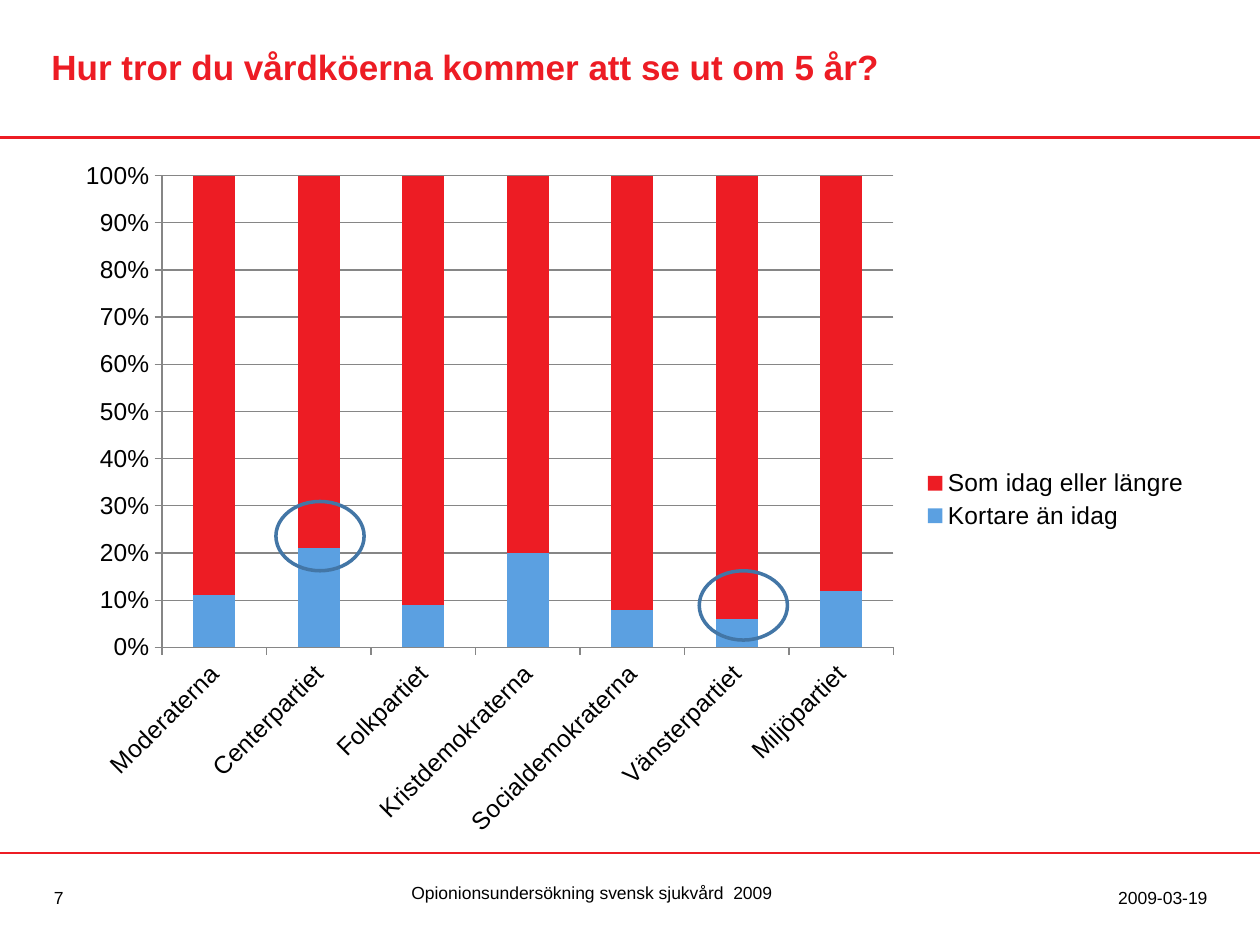
import pptx
import pptx.util
import pptx.chart.data
import pptx.dml.color
import pptx.enum.chart
import pptx.enum.shapes
import pptx.enum.text
import pptx.oxml
import pptx.oxml.ns

Inches, Pt = pptx.util.Inches, pptx.util.Pt
RGBColor = pptx.dml.color.RGBColor
ALIGN = pptx.enum.text.PP_ALIGN
XL = pptx.enum.chart

RED = RGBColor(0xED, 0x1C, 0x24)
BLUE = RGBColor(0x5B, 0xA0, 0xE1)
RING = RGBColor(0x43, 0x76, 0xA6)
GREY = RGBColor(0x86, 0x86, 0x86)
BLACK = RGBColor(0, 0, 0)
FACE = "Arial"
WIDE, HIGH = 10, 7.5

CATS = ["Moderaterna", "Centerpartiet", "Folkpartiet", "Kristdemokraterna",
        "Socialdemokraterna", "Vänsterpartiet", "Miljöpartiet"]
SHORT = [11, 21, 9, 20, 8, 6, 12]
SERIES = [("Kortare än idag", SHORT, BLUE),
          ("Som idag eller längre", [100 - val for val in SHORT], RED)]


def add_text(slide, box, text, size, color=BLACK, bold=False, align=ALIGN.LEFT):
    frame = slide.shapes.add_textbox(*map(Inches, box)).text_frame
    frame.word_wrap = True
    frame.vertical_anchor = pptx.enum.text.MSO_ANCHOR.MIDDLE
    frame.text = text
    para = frame.paragraphs[0]
    para.alignment = align
    font = para.runs[0].font
    font.name, font.size, font.bold = FACE, Pt(size), bold
    font.color.rgb = color


def add_rule(slide, top):
    line = slide.shapes.add_connector(
        pptx.enum.shapes.MSO_CONNECTOR.STRAIGHT,
        0, Inches(top), Inches(WIDE), Inches(top))
    line.line.color.rgb = RED
    line.line.width = Pt(1.5)
    line._element.spPr.append(pptx.oxml.parse_xml(
        "<a:effectLst %s/>" % pptx.oxml.ns.nsdecls("a")))


def add_header(slide, left, top, width):
    add_text(slide, (left, top, width, 0.45),
             "Hur tror du vårdköerna kommer att se ut om 5 år?", 20, RED, True)
    add_rule(slide, top + 0.79)


def add_footer(slide, left, top, width):
    add_rule(slide, top)
    add_text(slide, (left, top + 0.22, 0.38, 0.27), "7", 10)
    add_text(slide, (left + 2.01, top + 0.18, 4.71, 0.27),
             "Opionionsundersökning svensk sjukvård  2009", 10,
             align=ALIGN.CENTER)
    add_text(slide, (left + width - 1.75, top + 0.22, 1.75, 0.27),
             "2009-03-19", 10, align=ALIGN.RIGHT)


def style_axis(axis):
    axis.major_tick_mark = XL.XL_TICK_MARK.OUTSIDE
    axis.minor_tick_mark = XL.XL_TICK_MARK.NONE
    axis.format.line.color.rgb = GREY
    font = axis.tick_labels.font
    font.name, font.size = FACE, Pt(14)
    font.color.rgb = BLACK


def add_chart(slide, left, top, width, height):
    data = pptx.chart.data.CategoryChartData()
    data.categories = CATS
    for name, vals, _ in SERIES:
        data.add_series(name, vals)
    chart = slide.shapes.add_chart(
        XL.XL_CHART_TYPE.COLUMN_STACKED_100,
        *map(Inches, (left, top, width, height)), data).chart
    chart.has_title = False
    chart.font.name, chart.font.size = FACE, Pt(14)
    chart.font.color.rgb = BLACK

    # Columns
    plot = chart.plots[0]
    plot.gap_width, plot.overlap = 150, 100
    plot.vary_by_categories = False
    for series, (_, _, color) in zip(plot.series, SERIES):
        series.format.fill.solid()
        series.format.fill.fore_color.rgb = color

    # Axes, with slanted party names
    cat, val = chart.category_axis, chart.value_axis
    style_axis(cat)
    style_axis(val)
    cat._element.txPr.find(pptx.oxml.ns.qn("a:bodyPr")).set("rot", "-2700000")
    val.minimum_scale, val.maximum_scale, val.major_unit = 0, 1, 0.1
    val.has_major_gridlines = True
    val.major_gridlines.format.line.color.rgb = GREY
    val.tick_labels.number_format = "0%"
    val.tick_labels.number_format_is_linked = False

    # Legend
    chart.has_legend = True
    chart.legend.position = XL.XL_LEGEND_POSITION.RIGHT
    chart.legend.include_in_layout = False

    # Fixed inner plot area, as shares of the chart
    area = chart._chartSpace.chart.plotArea
    old = area.find(pptx.oxml.ns.qn("c:layout"))
    if old is not None:
        area.remove(old)
    sides = "".join('<c:%s val="%s"/>' % pair for pair in
                    (("x", 0.09), ("y", 0.04), ("w", 0.64), ("h", 0.67)))
    area.insert(0, pptx.oxml.parse_xml(
        '<c:layout %s><c:manualLayout><c:layoutTarget val="inner"/>'
        '<c:xMode val="edge"/><c:yMode val="edge"/>%s'
        '</c:manualLayout></c:layout>' % (pptx.oxml.ns.nsdecls("c"), sides)))


def add_ring(slide, left, top):
    ring = slide.shapes.add_shape(
        pptx.enum.shapes.MSO_SHAPE.OVAL,
        *map(Inches, (left, top, 0.7, 0.55)))
    ring.shadow.inherit = False
    ring.fill.background()
    ring.line.color.rgb = RING
    ring.line.width = Pt(2)


def main():
    deck = pptx.Presentation()
    deck.slide_width, deck.slide_height = Inches(WIDE), Inches(HIGH)
    slide = deck.slides.add_slide(deck.slide_layouts[6])
    add_header(slide, 0.31, 0.3, 7.03)
    add_footer(slide, 0.33, 6.77, 9.35)
    add_chart(slide, 0.47, 1.17, 9.07, 5.59)
    # Rings around the highest and lowest share
    for left, top in ((5.55, 4.53), (2.19, 3.98)):
        add_ring(slide, left, top)
    deck.save("out.pptx")


if __name__ == "__main__":
    main()
